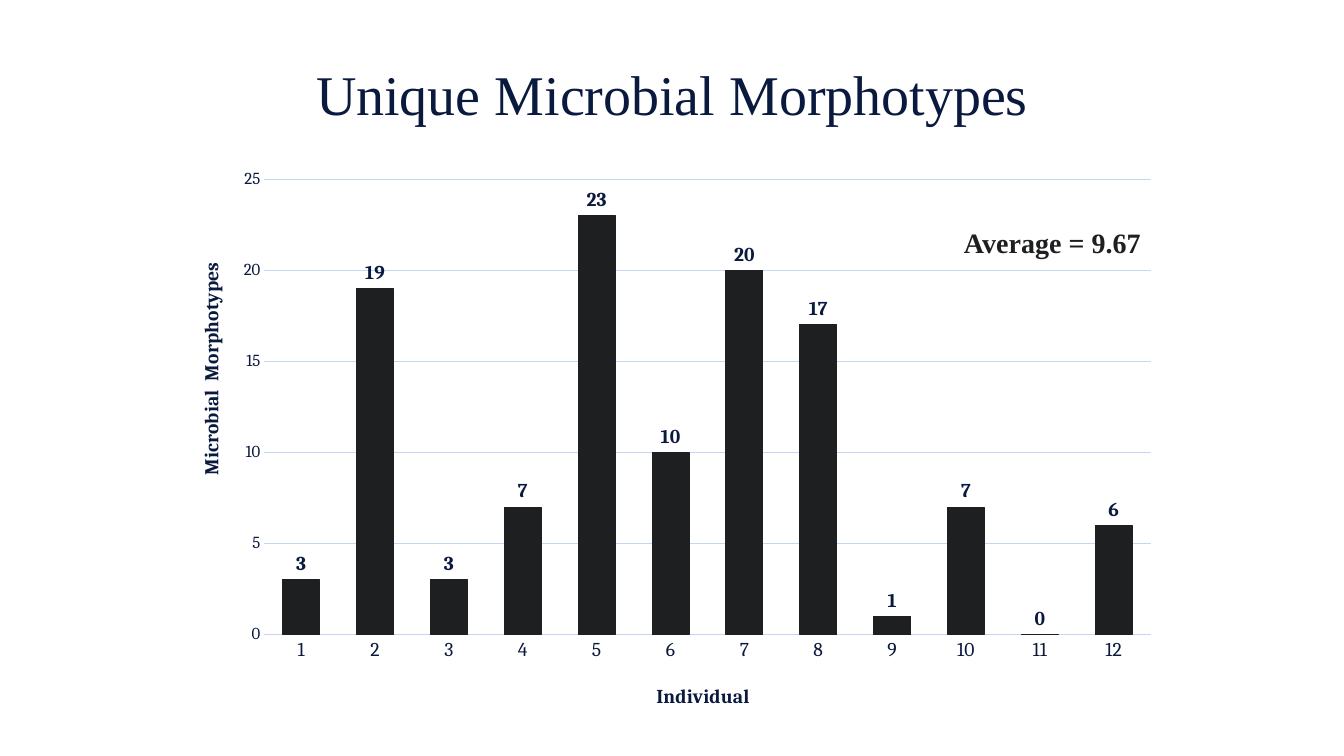
import pptx
import pptx.chart.data
import pptx.dml.color
import pptx.enum.chart
import pptx.enum.text
import pptx.oxml
import pptx.oxml.ns
import pptx.util

NAVY = pptx.dml.color.RGBColor(0x0A, 0x19, 0x3E)
CHARCOAL = pptx.dml.color.RGBColor(0x1E, 0x1F, 0x21)
PALE_BLUE = pptx.dml.color.RGBColor(0xC6, 0xD4, 0xF6)
SERIF, CHART_FONT = "Times New Roman", "Cambria"
WIDTH, HEIGHT = pptx.util.Inches(13.33), pptx.util.Inches(7.5)
MORPHOTYPES = (3, 19, 3, 7, 23, 10, 20, 17, 1, 7, 0, 6)


def share(left, top, width, height):
    """Turn shares of the slide's size into lengths."""
    return [int(part * whole) for part, whole in
            zip((left, top, width, height), (WIDTH, HEIGHT) * 2)]


def format_font(font, size, color, name, bold=False):
    values = {"size": pptx.util.Pt(size), "name": name, "bold": bold}
    for key, value in values.items():
        setattr(font, key, value)
    font.color.rgb = color


def format_line(line, color):
    line.color.rgb = color
    line.width = pptx.util.Pt(0.75)


def fill_text(shape, text, size, color, bold=False):
    frame = shape.text_frame
    frame.word_wrap = True
    para = frame.paragraphs[0]
    para.alignment = pptx.enum.text.PP_ALIGN.CENTER
    span = para.add_run()
    span.text = text
    format_font(span.font, size, color, SERIF, bold)


def place_in_chart(element, index, target=None, **shares):
    """Give a chart part a manual layout in shares of the chart's size."""
    qn = pptx.oxml.ns.qn
    for old in element.findall(qn("c:layout")):
        element.remove(old)
    inner = f'<c:layoutTarget val="{target}"/>' if target else ""
    modes = "".join(f'<c:{key}Mode val="edge"/>' for key in "xy")
    values = "".join(f'<c:{key} val="{value}"/>' for key, value in shares.items())
    element.insert(index, pptx.oxml.parse_xml(
        f'<c:layout {pptx.oxml.ns.nsdecls("c")}><c:manualLayout>'
        f"{inner}{modes}{values}</c:manualLayout></c:layout>"))


def format_axis(axis, title, size, x, y):
    axis.major_tick_mark = axis.minor_tick_mark = pptx.enum.chart.XL_TICK_MARK.NONE
    format_font(axis.tick_labels.font, size, NAVY, CHART_FONT)
    span = axis.axis_title.text_frame.paragraphs[0].add_run()
    span.text = title
    format_font(span.font, 14, NAVY, CHART_FONT, True)
    place_in_chart(axis.axis_title._element, 1, x=x, y=y)


def add_column_chart(page):
    data = pptx.chart.data.CategoryChartData()
    data.categories = [str(number + 1) for number in range(len(MORPHOTYPES))]
    data.add_series("Series 1", MORPHOTYPES)
    chart = page.shapes.add_chart(
        pptx.enum.chart.XL_CHART_TYPE.COLUMN_CLUSTERED,
        *share(0.13, 0.207, 0.741, 0.753), data).chart
    chart.has_legend = chart.has_title = False
    format_font(chart.font, 10, NAVY, CHART_FONT)

    format_axis(chart.category_axis, "Individual", 14, 0.48, 0.92)
    format_line(chart.category_axis.format.line, PALE_BLUE)
    values = chart.value_axis
    format_axis(values, "Microbial  Morphotypes", 12, 0.02, 0.18)
    values.minimum_scale, values.maximum_scale, values.major_unit = 0, 25, 5
    values.format.line.fill.background()
    format_line(values.major_gridlines.format.line, PALE_BLUE)

    plot = chart.plots[0]
    plot.gap_width, plot.overlap, plot.vary_by_categories = 100, -24, False
    columns = plot.series[0]
    columns.format.fill.solid()
    columns.format.fill.fore_color.rgb = CHARCOAL
    format_line(columns.format.line, CHARCOAL)
    labels = columns.data_labels
    labels.show_value = True
    labels.position = pptx.enum.chart.XL_LABEL_POSITION.OUTSIDE_END
    format_font(labels.font, 14, NAVY, CHART_FONT, True)

    area = chart._chartSpace.find(".//" + pptx.oxml.ns.qn("c:plotArea"))
    place_in_chart(area, 0, "inner", x=0.09, y=0.04, w=0.89, h=0.8)


def main():
    deck = pptx.Presentation()
    deck.slide_width, deck.slide_height = WIDTH, HEIGHT
    page = deck.slides.add_slide(deck.slide_layouts[5])

    title = page.shapes.title
    title.left, title.top, title.width, title.height = share(0.05, 0.04, 0.9, 0.167)
    title.text_frame.vertical_anchor = pptx.enum.text.MSO_ANCHOR.MIDDLE
    fill_text(title, "Unique Microbial Morphotypes", 40, NAVY)

    add_column_chart(page)
    average = page.shapes.add_textbox(*share(0.678, 0.292, 0.21, 0.059))
    fill_text(average, "Average = 9.67", 20, CHARCOAL, True)
    deck.save("out.pptx")


if __name__ == "__main__":
    main()
